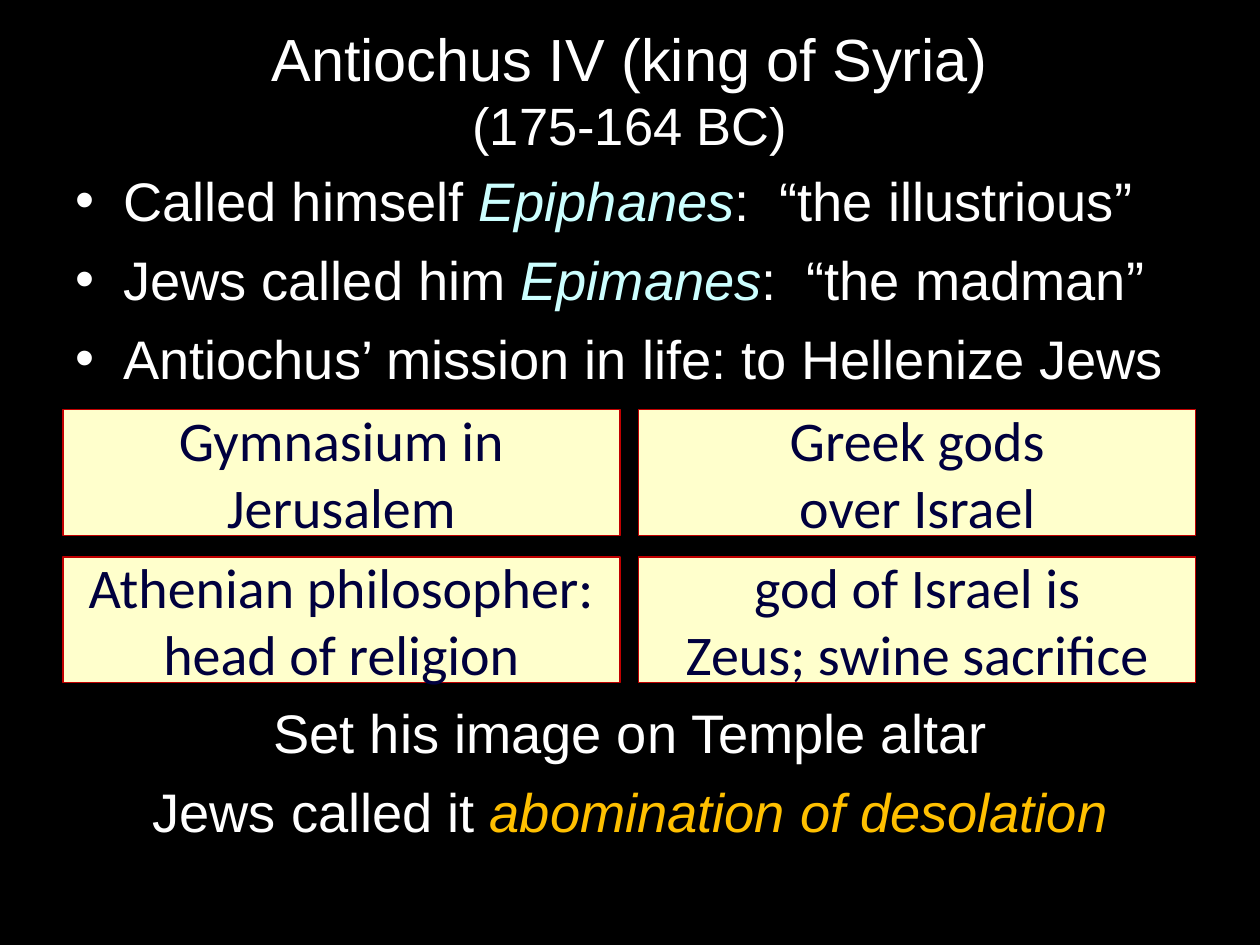
from lxml import etree
from pptx import Presentation
from pptx.dml.color import RGBColor
from pptx.enum.shapes import MSO_SHAPE
from pptx.enum.text import MSO_ANCHOR, MSO_AUTO_SIZE, PP_ALIGN
from pptx.oxml.ns import qn
from pptx.util import Inches, Pt

LEFT, CENTER = PP_ALIGN.LEFT, PP_ALIGN.CENTER
TOP, MIDDLE = MSO_ANCHOR.TOP, MSO_ANCHOR.MIDDLE
TITLE_ONLY = 5

BLACK, WHITE, AQUA, GOLD = "000000", "FFFFFF", "CCFFFF", "FFC000"
CREAM, RED, NAVY = "FFFFCC", "C00000", "00003E"

# A paragraph is a list of runs; a run is (text, format that differs).
TITLE = [[("Antiochus IV (king of Syria)\n", {}), ("(175-164 BC)", {"size": 30})]]
NAMES = [
    [("Called himself ", {}), ("Epiphanes", {"color": AQUA, "italic": True}),
     (":  “the illustrious”", {})],
    [("Jews called him ", {}), ("Epimanes", {"color": AQUA, "italic": True}),
     (":  “the madman”", {})],
    [("Antiochus’ mission in life: to Hellenize Jews", {})],
]
MEASURES = [
    [[("Gymnasium in Jerusalem", {})]],
    [[("Greek gods\nover Israel", {})]],
    [[("Athenian philosopher:", {})], [("head of religion", {})]],
    [[("god of Israel is\nZeus; swine sacrifice", {})]],
]
OUTCOME = [
    [("Set his image on Temple altar", {})],
    [("Jews called it ", {}),
     ("abomination of desolation", {"color": GOLD, "italic": True})],
]

MARGIN, CONTENT_WIDTH = 0.5, 9
GRID_TOP, COLUMNS = 3.25, 2
CELL_WIDTH, CELL_HEIGHT = 4.42, 1
COLUMN_STEP, ROW_STEP = 4.57, 1.17
INDENT = 0.38


def rgb(color):
    return RGBColor.from_string(color)


def place(shape, left, top, width, height):
    shape.left, shape.top = Inches(left), Inches(top)
    shape.width, shape.height = Inches(width), Inches(height)


def add_bullet(paragraph):
    properties = paragraph._p.get_or_add_pPr()
    properties.set("marL", str(Inches(INDENT)))
    properties.set("indent", str(-Inches(INDENT)))
    etree.SubElement(properties, qn("a:buFont"), typeface="Arial")
    etree.SubElement(properties, qn("a:buChar"), char="•")


def write(shape, paragraphs, size=31, font="Arial", color=WHITE, align=CENTER,
          anchor=TOP, before=0, bullets=False):
    frame = shape.text_frame
    frame.word_wrap = True
    frame.auto_size = MSO_AUTO_SIZE.NONE
    frame.vertical_anchor = anchor
    for index, runs in enumerate(paragraphs):
        paragraph = frame.add_paragraph() if index else frame.paragraphs[0]
        paragraph.alignment = align
        paragraph.space_before = Pt(before)
        if bullets:
            add_bullet(paragraph)
        for text, changes in runs:
            for number, line in enumerate(text.split("\n")):
                if number:
                    paragraph.add_line_break()
                if not line:
                    continue
                run = paragraph.add_run()
                run.text = line
                run.font.name = font
                run.font.size = Pt(changes.get("size", size))
                run.font.italic = changes.get("italic", False)
                run.font.color.rgb = rgb(changes.get("color", color))


def add_text(slide, top, height, paragraphs, **text_format):
    box = slide.shapes.add_textbox(0, 0, 0, 0)
    place(box, MARGIN, top, CONTENT_WIDTH, height)
    write(box, paragraphs, **text_format)


def add_measure(slide, index, paragraphs):
    row, column = divmod(index, COLUMNS)
    cell = slide.shapes.add_shape(MSO_SHAPE.RECTANGLE, 0, 0, 0, 0)
    place(cell, MARGIN + column * COLUMN_STEP, GRID_TOP + row * ROW_STEP,
          CELL_WIDTH, CELL_HEIGHT)
    cell.shadow.inherit = False
    cell.fill.solid()
    cell.fill.fore_color.rgb = rgb(CREAM)
    cell.line.color.rgb = rgb(RED)
    cell.line.width = Pt(0.75)
    write(cell, paragraphs, size=32, font="Calibri", color=NAVY, anchor=MIDDLE)


def main():
    deck = Presentation()
    deck.slide_width, deck.slide_height = Inches(10), Inches(7.5)
    slide = deck.slides.add_slide(deck.slide_layouts[TITLE_ONLY])
    slide.background.fill.solid()
    slide.background.fill.fore_color.rgb = rgb(BLACK)

    title = slide.shapes.title
    place(title, MARGIN, 0.08, CONTENT_WIDTH, 1.25)
    write(title, TITLE, size=34, anchor=MIDDLE)

    add_text(slide, 1.28, 1.9, NAMES, align=LEFT, before=7.75, bullets=True)
    for index, paragraphs in enumerate(MEASURES):
        add_measure(slide, index, paragraphs)
    add_text(slide, 5.5, 1.5, OUTCOME, before=7.75)
    deck.save("out.pptx")


if __name__ == "__main__":
    main()
